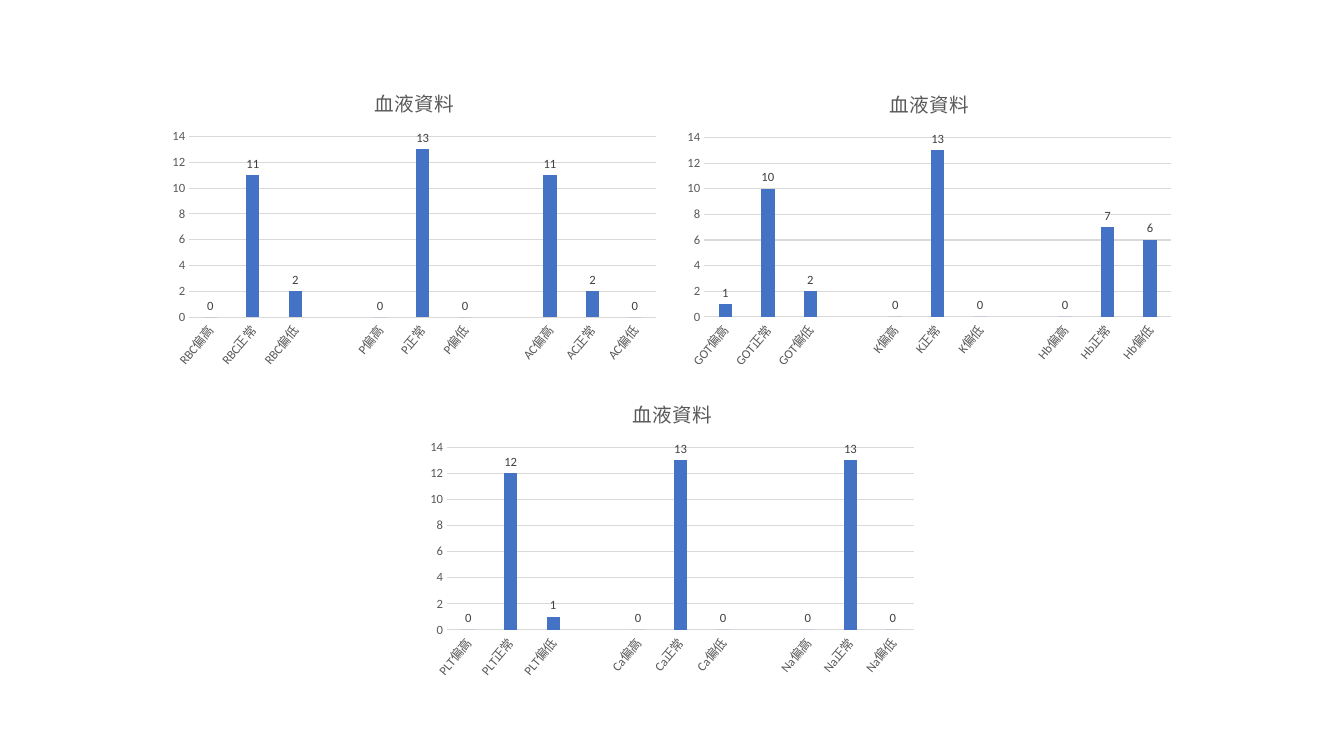
from pptx import Presentation
from pptx.chart.data import CategoryChartData
from pptx.dml.color import RGBColor
from pptx.enum.chart import XL_CHART_TYPE as ChartType
from pptx.enum.chart import XL_LABEL_POSITION as LabelPosition
from pptx.enum.chart import XL_TICK_MARK as TickMark
from pptx.util import Cm, Pt

BLUE = RGBColor(0x44, 0x72, 0xC4)
BLACK = RGBColor(0x00, 0x00, 0x00)
DARK_GRAY = RGBColor(0x40, 0x40, 0x40)
GRAY = RGBColor(0x59, 0x59, 0x59)
LIGHT_GRAY = RGBColor(0xD9, 0xD9, 0xD9)

TITLE = "血液資料"
LEVELS = ("偏高", "正常", "偏低")
LABEL_ANGLE = -50
PANELS = [
    (4.09, 1.8, {"RBC": (0, 11, 2), "P": (0, 13, 0), "AC": (11, 2, 0)}),
    (17.07, 1.83, {"GOT": (1, 10, 2), "K": (0, 13, 0), "Hb": (0, 7, 6)}),
    (10.59, 9.63, {"PLT": (0, 12, 1), "Ca": (0, 13, 0), "Na": (0, 13, 0)}),
]


def format_font(font, size=9, color=GRAY, name="Calibri"):
    font.size = Pt(size)
    font.bold = False
    font.name = name
    font.color.rgb = color


def format_line(line, color=LIGHT_GRAY, width=0.75):
    line.color.rgb = color
    line.width = Pt(width)


def write_text(frame, text, **style):
    para = frame.paragraphs[0]
    span = para.add_run()
    span.text = text
    format_font(span.font, **style)


def blood_data(tests):
    data = CategoryChartData(number_format="General")
    values = []
    for test, counts in tests.items():
        if values:
            data.add_category("")
            values.append(None)
        for level, count in zip(LEVELS, counts):
            data.add_category(test + level)
            values.append(count)
    data.add_series("Series 1", values)
    return data


class ChartPage:
    width, height = Cm(12.7), Cm(7.62)

    def __init__(self, deck):
        self.page = deck.slides.add_slide(deck.slide_layouts[6])

    def column_chart(self, left, top, tests):
        box = self.page.shapes.add_chart(
            ChartType.COLUMN_CLUSTERED, Cm(left), Cm(top),
            self.width, self.height, blood_data(tests))
        chart = box.chart
        format_font(chart.font, size=10, color=BLACK)
        chart.has_legend = False
        chart.has_title = True
        write_text(chart.chart_title.text_frame, TITLE, size=14)
        chart.chart_title.include_in_layout = False
        self.style_axes(chart)
        self.style_columns(chart.plots[0])

    def style_axes(self, chart):
        for axis in (chart.category_axis, chart.value_axis):
            axis.major_tick_mark = axis.minor_tick_mark = TickMark.NONE
            format_font(axis.tick_labels.font)
        format_line(chart.category_axis.format.line)
        chart.value_axis.format.line.fill.background()
        format_line(chart.value_axis.major_gridlines.format.line)
        label_text = chart.category_axis._element.txPr
        label_text.bodyPr.set("rot", str(LABEL_ANGLE * 60000))

    def style_columns(self, plot):
        plot.gap_width = 219
        plot.overlap = -27
        plot.vary_by_categories = False
        fill = plot.series[0].format.fill
        fill.solid()
        fill.fore_color.rgb = BLUE
        labels = plot.series[0].data_labels
        labels.show_value = True
        labels.position = LabelPosition.OUTSIDE_END
        format_font(labels.font, color=DARK_GRAY)


def main():
    deck = Presentation()
    deck.slide_width, deck.slide_height = Cm(33.87), Cm(19.05)
    page = ChartPage(deck)
    for left, top, tests in PANELS:
        page.column_chart(left, top, tests)
    deck.save("out.pptx")


if __name__ == "__main__":
    main()
